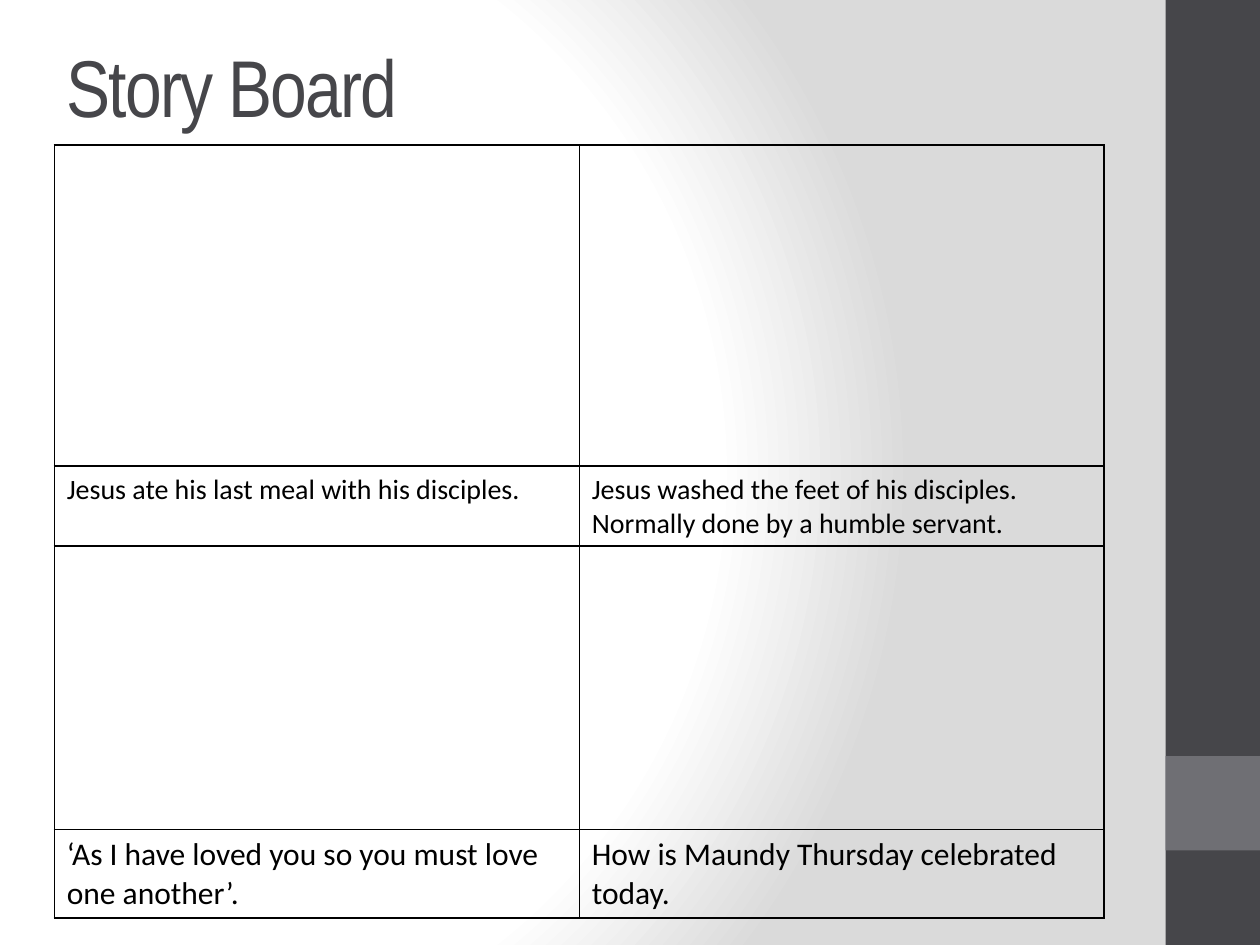
from pptx import Presentation, util as u, oxml
from pptx.dml.color import RGBColor
from pptx.enum import shapes, text
from pptx.oxml.ns import qn

Pt = u.Pt
INK = {"dark": "46464A", "mid": "6F6F74", "line": "000000",
       "white": "FFFFFF", "grey": "DADADA"}
TITLE = "Story Board"
ROWS = [
    (183.6, 16, ("", "")),
    (29.2, 16, ("Jesus ate his last meal with his disciples.",
                "Jesus washed the feet of his disciples. "
                "Normally done by a humble servant.")),
    (162, 16, ("", "")),
    (29.2, 18, ("‘As I have loved you so you must love one another’.",
                "How is Maundy Thursday celebrated today.")),
]
BARS = [(0, 540, "dark"), (432, 54, "mid")]
STOPS = [(0, "white"), (75, "white"), (100, "grey")]
LEFT, TOP, WIDE = 31, 82.8, 600
NS = 'xmlns:a="http://schemas.openxmlformats.org/drawingml/2006/main"'


def rgb(name):
    return RGBColor.from_string(INK[name])


def write(frame, words, size=16, font="Calibri", ink="line", space=0):
    run = frame.paragraphs[0].add_run()
    run.text = words
    run.font.size = Pt(size)
    run.font.name = font
    run.font.color.rgb = rgb(ink)
    if space:
        run.font._element.set("spc", str(space * 100))


def shade(slide):
    slide.background.fill.gradient()
    old = next(slide.element.iter(qn("a:gradFill")))
    stops = "".join(f'<a:gs pos="{pos * 1000}"><a:srgbClr val="{INK[ink]}"/></a:gs>'
                    for pos, ink in STOPS)
    new = oxml.parse_xml(
        f'<a:gradFill {NS} rotWithShape="1"><a:gsLst>{stops}</a:gsLst>'
        '<a:path path="circle"><a:fillToRect l="20000" t="50000" r="100000" '
        'b="50000"/></a:path></a:gradFill>')
    old.getparent().replace(old, new)


def edge(cell):
    cell.fill.background()
    props = cell._tc.get_or_add_tcPr()
    for spot, side in enumerate("LRTB"):
        props.insert(spot, oxml.parse_xml(
            f'<a:ln{side} {NS} w="12700"><a:solidFill><a:srgbClr '
            f'val="{INK["line"]}"/></a:solidFill></a:ln{side}>'))


def main():
    deck = Presentation()
    deck.slide_width, deck.slide_height = Pt(720), Pt(540)
    slide = deck.slides.add_slide(deck.slide_layouts[6])
    shade(slide)

    for top, high, ink in BARS:
        bar = slide.shapes.add_shape(shapes.MSO_SHAPE.RECTANGLE,
                                     Pt(666), Pt(top), Pt(54), Pt(high))
        bar.shadow.inherit = False
        bar.fill.solid()
        bar.fill.fore_color.rgb = rgb(ink)
        bar.line.fill.background()

    head = slide.shapes.add_textbox(Pt(LEFT), Pt(15), Pt(WIDE), Pt(67.8)).text_frame
    head.word_wrap = True
    head.vertical_anchor = text.MSO_ANCHOR.MIDDLE
    write(head, TITLE, size=46, font="Arial Narrow", ink="dark", space=-1)

    total = sum(row[0] for row in ROWS)
    board = slide.shapes.add_table(len(ROWS), 2, Pt(LEFT), Pt(TOP),
                                   Pt(WIDE), Pt(total)).table
    board.first_row = board.horz_banding = False
    for r, (high, size, words) in enumerate(ROWS):
        board.rows[r].height = Pt(high)
        for c, line in enumerate(words):
            cell = board.cell(r, c)
            edge(cell)
            if line:
                write(cell.text_frame, line, size=size)

    deck.save("out.pptx")


if __name__ == "__main__":
    main()
